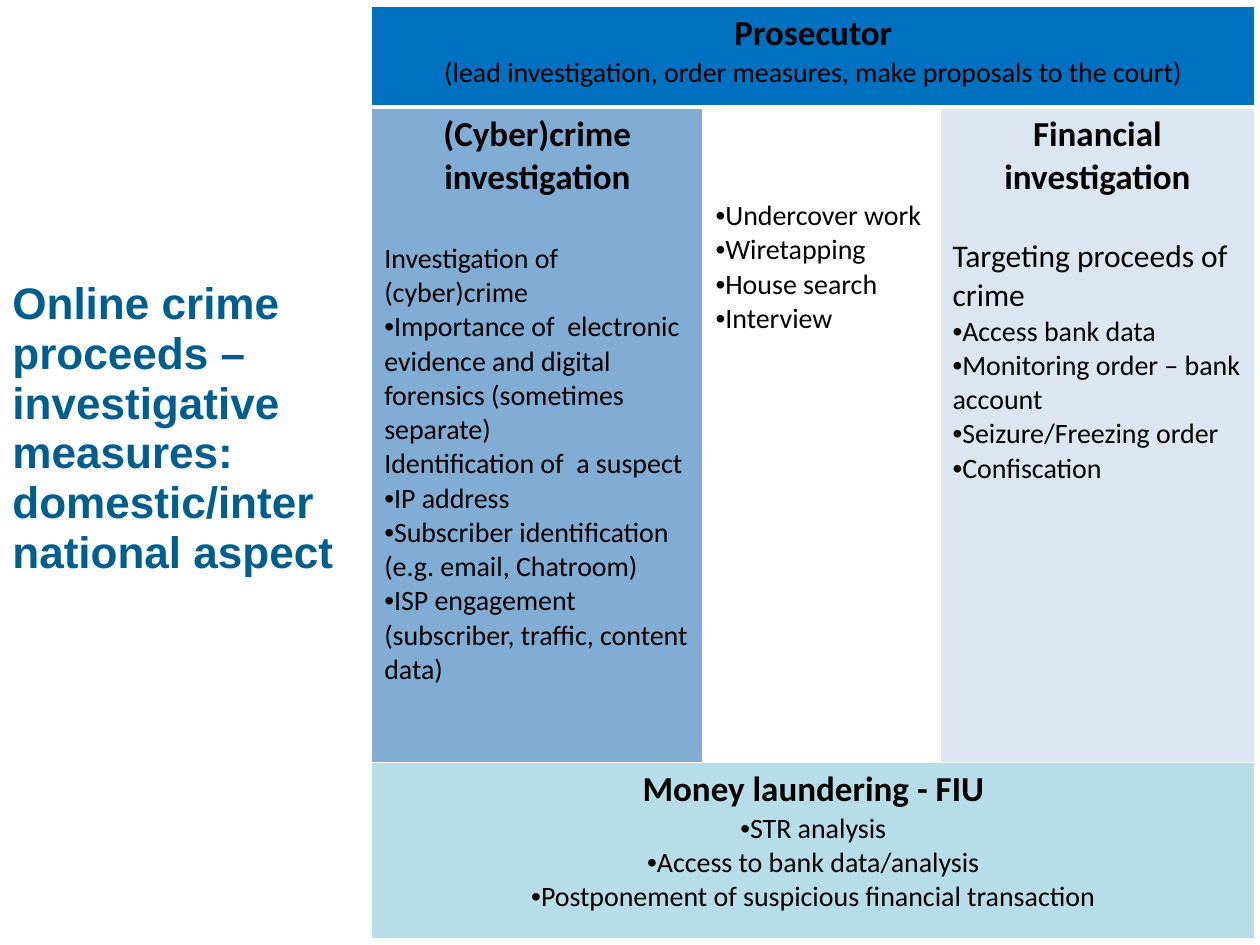
from dataclasses import dataclass

from lxml import etree
from pptx import Presentation
from pptx.dml.color import RGBColor
from pptx.enum.text import MSO_ANCHOR, PP_ALIGN
from pptx.oxml.ns import qn
from pptx.util import Inches, Pt

LEFT, CENTER = PP_ALIGN.LEFT, PP_ALIGN.CENTER
MIDDLE = MSO_ANCHOR.MIDDLE

SLIDE_WIDTH, SLIDE_HEIGHT = 10, 7.5
COLUMN_WIDTHS = (2.63, 1.88, 2.5)
ROW_HEIGHTS = (0.8, 5.2, 1.4)
TABLE_LEFT, TABLE_TOP = 2.95, 0.05
HEADING_LINES = 0.68  # two lines of heading

COLORS = {
    "title": "005E8E",
    "text": "000000",
    "border": "FFFFFF",
    "prosecutor": "0070C0",
    "cybercrime": "81ADD5",
    "shared": "FFFFFF",
    "financial": "DCE6F2",
    "laundering": "B7DEE8",
}


@dataclass(frozen=True)
class Line:
    text: str
    size: float = 16
    bold: bool = False
    bullet: bool = False
    align: PP_ALIGN = LEFT
    before: float = 0


@dataclass(frozen=True)
class Block:
    row: int
    column: int
    color: str
    lines: tuple[Line, ...]
    span: int = 1
    top_margin: float = 0.05


def heading(text: str) -> Line:
    return Line(text, size=20, bold=True, align=CENTER)


def bullets(*texts: str, align: PP_ALIGN = LEFT) -> tuple[Line, ...]:
    return tuple(Line(text, bullet=True, align=align) for text in texts)


BLOCKS = (
    Block(0, 0, "prosecutor", (
        heading("Prosecutor"),
        Line("(lead investigation, order measures, make proposals to the court)",
             align=CENTER),
    ), span=3),
    Block(1, 0, "cybercrime", (
        heading("(Cyber)crime investigation"),
        Line("Investigation of (cyber)crime", before=24.4),
        *bullets("Importance of  electronic evidence and digital forensics "
                 "(sometimes separate)"),
        Line("Identification of  a suspect"),
        *bullets("IP address",
                 "Subscriber identification (e.g. email, Chatroom)",
                 "ISP engagement (subscriber, traffic, content data)"),
    )),
    Block(1, 1, "shared",
          bullets("Undercover work", "Wiretapping", "House search", "Interview"),
          top_margin=0.05 + HEADING_LINES),
    Block(1, 2, "financial", (
        heading("Financial investigation"),
        Line("Targeting proceeds of crime", size=18, before=22),
        *bullets("Access bank data", "Monitoring order – bank account",
                 "Seizure/Freezing order", "Confiscation"),
    )),
    Block(2, 0, "laundering", (
        heading("Money laundering - FIU"),
        *bullets("STR analysis", "Access to bank data/analysis",
                 "Postponement of suspicious financial transaction", align=CENTER),
    ), span=3),
)

# Left, right, top and bottom border widths of each row, in points
ROW_BORDERS = ((1, 1, 1, 3), (1, 1, 3, 1), (1, 1, 1, 1))


def set_font(paragraph, name: str, size: float, bold: bool, color: str) -> None:
    for attribute, value in {"name": name, "size": Pt(size), "bold": bold}.items():
        setattr(paragraph.font, attribute, value)
    paragraph.font.color.rgb = RGBColor.from_string(COLORS[color])


def add_bullet(paragraph) -> None:
    properties = paragraph._p.get_or_add_pPr()
    properties.set("marL", "0")
    properties.set("indent", "0")
    etree.SubElement(properties, qn("a:buFont")).set("typeface", "Arial")
    etree.SubElement(properties, qn("a:buChar")).set("char", "•")


def set_borders(cell, widths: tuple[int, ...]) -> None:
    properties = cell._tc.get_or_add_tcPr()
    for position, (side, width) in enumerate(zip(("lnL", "lnR", "lnT", "lnB"), widths)):
        border = etree.Element(qn(f"a:{side}"), w=str(Pt(width)))
        fill = etree.SubElement(border, qn("a:solidFill"))
        etree.SubElement(fill, qn("a:srgbClr")).set("val", COLORS["border"])
        properties.insert(position, border)


def write_lines(frame, lines: tuple[Line, ...]) -> None:
    for index, line in enumerate(lines):
        paragraph = frame.add_paragraph() if index else frame.paragraphs[0]
        if line.bullet:
            add_bullet(paragraph)
        paragraph.text = line.text
        paragraph.alignment = line.align
        if line.before:
            paragraph.space_before = Pt(line.before)
        set_font(paragraph, "Calibri", line.size, line.bold, "text")


def fill_block(table, block: Block) -> None:
    cell = table.cell(block.row, block.column)
    if block.span > 1:
        cell.merge(table.cell(block.row, block.column + block.span - 1))
    margins = {"margin_left": 0.1, "margin_right": 0.1,
               "margin_top": block.top_margin, "margin_bottom": 0.05}
    for attribute, value in margins.items():
        setattr(cell, attribute, Inches(value))
    for column in range(block.column, block.column + block.span):
        part = table.cell(block.row, column)
        part.fill.solid()
        part.fill.fore_color.rgb = RGBColor.from_string(COLORS[block.color])
        set_borders(part, ROW_BORDERS[block.row])
    write_lines(cell.text_frame, block.lines)


def add_title(slide) -> None:
    box = slide.shapes.add_textbox(0, Inches(3.05), Inches(0.28 * SLIDE_WIDTH),
                                   Inches(0.71))
    frame = box.text_frame
    frame.word_wrap = True
    frame.vertical_anchor = MIDDLE
    paragraph = frame.paragraphs[0]
    paragraph.text = ("Online crime proceeds – investigative measures: \v"
                      "domestic/international aspect")
    paragraph.line_spacing = 0.94
    set_font(paragraph, "Arial", 25.2, True, "title")


def add_measures_table(slide) -> None:
    table = slide.shapes.add_table(
        len(ROW_HEIGHTS), len(COLUMN_WIDTHS), Inches(TABLE_LEFT), Inches(TABLE_TOP),
        Inches(sum(COLUMN_WIDTHS)), Inches(sum(ROW_HEIGHTS))).table
    table.horz_banding = False
    table.first_row = False
    for column, width in zip(table.columns, COLUMN_WIDTHS):
        column.width = Inches(width)
    for row, height in zip(table.rows, ROW_HEIGHTS):
        row.height = Inches(height)
    for block in BLOCKS:
        fill_block(table, block)


def main() -> None:
    presentation = Presentation()
    presentation.slide_width = Inches(SLIDE_WIDTH)
    presentation.slide_height = Inches(SLIDE_HEIGHT)
    slide = presentation.slides.add_slide(presentation.slide_layouts[6])
    add_title(slide)
    add_measures_table(slide)
    presentation.save("out.pptx")


if __name__ == "__main__":
    main()
